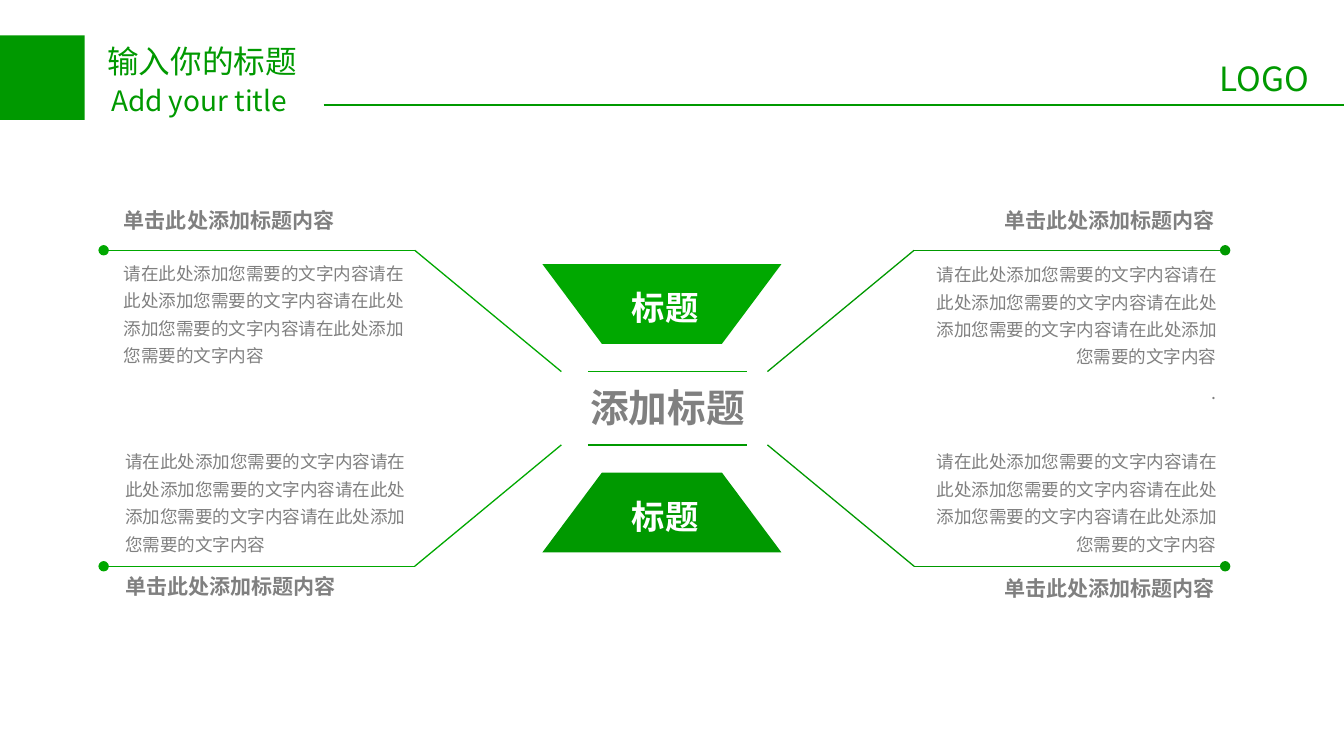
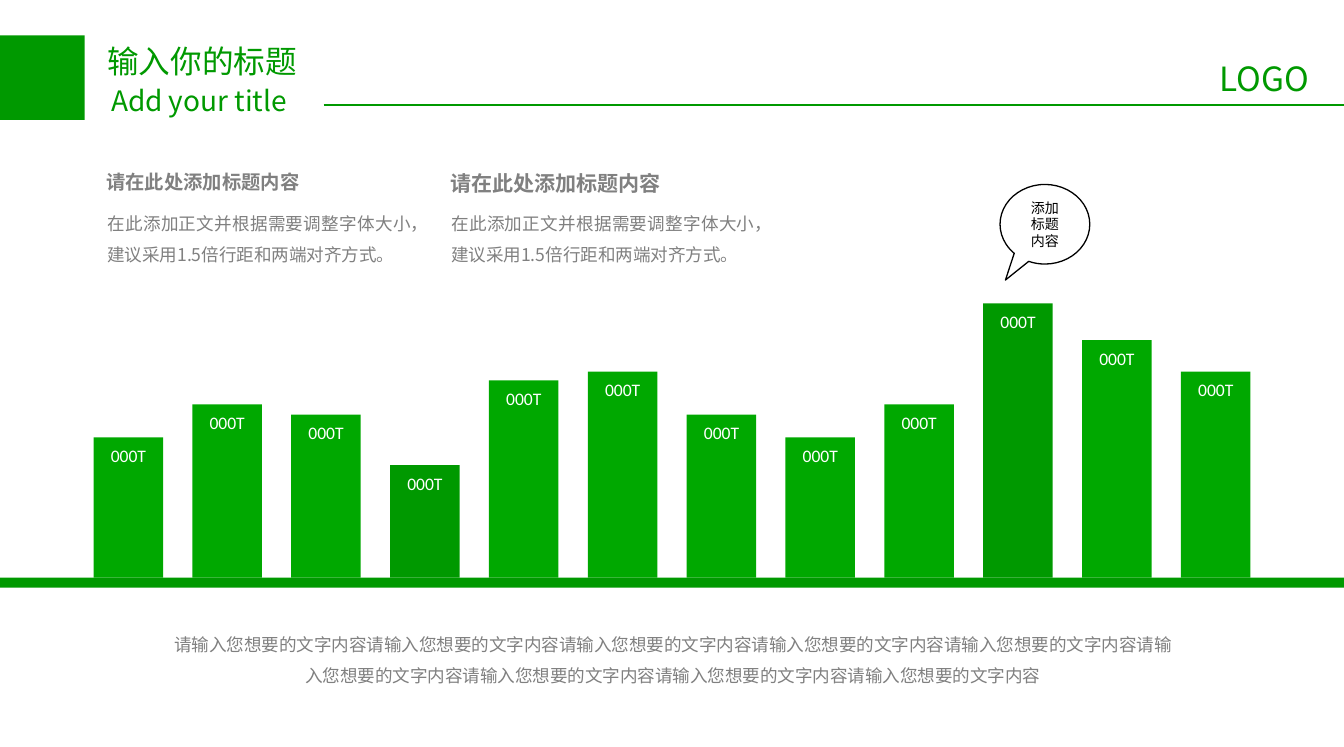
from dataclasses import dataclass

import lxml.etree
import pptx
import pptx.dml.color
import pptx.enum.shapes
import pptx.enum.text
import pptx.oxml.ns
import pptx.util

Inches = pptx.util.Inches
Align = pptx.enum.text.PP_ALIGN
Anchor = pptx.enum.text.MSO_ANCHOR
Shape = pptx.enum.shapes.MSO_SHAPE


@dataclass(frozen=True)
class Theme:
    dark_green: str = "009900"
    green: str = "00A800"
    grey: str = "808080"
    white: str = "FFFFFF"
    black: str = "000000"
    noto: str = "Noto Sans CJK SC"
    arial: str = "Arial"
    calibri: str = "Calibri"
    title: int = 18
    subtitle: int = 16
    label: int = 19
    center: int = 22
    heading: int = 12
    small_heading: int = 11
    body: int = 10
    callout: int = 8
    line: float = 0.75


THEME = Theme()
SLIDE_WIDTH, SLIDE_HEIGHT = 10.63, 5.91
DEFAULT_INSETS = (0.1, 0.05, 0.1, 0.05)
TEXT_INSETS = (0.08, 0.04, 0.08, 0.04)
FLUSH_INSETS = (0, 0.04, 0, 0.04)


def rgb(color):
    return pptx.dml.color.RGBColor.from_string(color)


def write_text(shape, *texts, size=THEME.body, font=THEME.arial, color=THEME.grey,
               bold=False, align=Align.LEFT, anchor=Anchor.TOP, insets=DEFAULT_INSETS,
               spacing=None, before=None, wrap=True):
    """Fill a shape with one paragraph per text."""
    frame = shape.text_frame
    frame.word_wrap = wrap
    frame.vertical_anchor = anchor
    (frame.margin_left, frame.margin_top,
     frame.margin_right, frame.margin_bottom) = map(Inches, insets)
    for index, text in enumerate(texts):
        paragraph = frame.add_paragraph() if index else frame.paragraphs[0]
        paragraph.alignment = align
        paragraph.line_spacing = spacing
        if before is not None:
            paragraph.space_before = pptx.util.Pt(before)
        run = paragraph.add_run()
        run.text = text
        run.font.size = pptx.util.Pt(size)
        run.font.bold = bold
        run.font.color.rgb = rgb(color)
        run.font.name = font
        # Chinese characters use the East Asian typeface
        east_asian = lxml.etree.SubElement(run.font._element, pptx.oxml.ns.qn("a:ea"))
        east_asian.set("typeface", THEME.noto)


def add_text(slide, box, *texts, **text_format):
    shape = slide.shapes.add_textbox(*map(Inches, box))
    write_text(shape, *texts, **text_format)


def paint(shape, fill, line=None):
    shape.shadow.inherit = False
    shape.fill.solid()
    shape.fill.fore_color.rgb = rgb(fill)
    if line:
        shape.line.color.rgb = rgb(line)
        shape.line.width = pptx.util.Pt(THEME.line)
    else:
        shape.line.fill.background()


def add_box(slide, box, fill, kind=Shape.RECTANGLE, line=None):
    shape = slide.shapes.add_shape(kind, *map(Inches, box))
    paint(shape, fill, line)
    return shape


def add_line(slide, start, end, color, dot=False):
    """Draw a straight line, with a dot at its start if wanted."""
    connector = slide.shapes.add_connector(
        pptx.enum.shapes.MSO_CONNECTOR.STRAIGHT, *map(Inches, (*start, *end)))
    connector.line.color.rgb = rgb(color)
    connector.line.width = pptx.util.Pt(THEME.line)
    properties = connector._element.spPr
    if dot:
        outline = properties.find(pptx.oxml.ns.qn("a:ln"))
        lxml.etree.SubElement(outline, pptx.oxml.ns.qn("a:headEnd")).set("type", "oval")
    lxml.etree.SubElement(properties, pptx.oxml.ns.qn("a:effectLst"))


def add_slide(presentation):
    """Add a blank slide with the shared title band."""
    slide = presentation.slides.add_slide(presentation.slide_layouts[6])
    style = {"font": THEME.noto, "color": THEME.dark_green}
    add_box(slide, (0, 0.28, 0.67, 0.67), THEME.dark_green)
    add_text(slide, (0.75, 0.28, 1.73, 0.4), "输入你的标题", size=THEME.title, **style)
    add_text(slide, (0.78, 0.61, 1.73, 0.37), "Add your title", size=THEME.subtitle, **style)
    add_line(slide, (2.56, 0.83), (SLIDE_WIDTH, 0.83), THEME.dark_green)
    add_text(slide, (9.55, 0.41, 0.96, 0.42), "LOGO", size=THEME.label, wrap=False, **style)
    return slide


def add_arm(slide, on_right, y, inner_y, color):
    """Draw a dotted rule that bends towards the center."""
    outer, bend, inner = (10.51 - x if on_right else x for x in (0.82, 3.28, 4.44))
    add_line(slide, (outer, y), (bend, y), color, dot=True)
    add_line(slide, (bend, y), (inner, inner_y), color)


def add_trapezoid(slide, wide_y, narrow_y, label_y, color):
    corners = [(4.29, wide_y), (4.76, narrow_y), (5.71, narrow_y), (6.18, wide_y)]
    points = [(Inches(x), Inches(y)) for x, y in corners]
    builder = slide.shapes.build_freeform(*points[0])
    builder.add_line_segments(points[1:], close=True)
    paint(builder.convert_to_shape(), color)
    add_text(slide, (4.9, label_y, 0.73, 0.42), "标题", size=THEME.label,
             color=THEME.white, bold=True, wrap=False)


def build_hub_slide(presentation):
    slide = add_slide(presentation)
    body = "请在此处添加您需要的文字内容" * 4

    # Four arms with heading and body: side, heading place, body place, font, extra
    arms = [
        (False, (0.9, 1.6), (0.9, 1.99), THEME.arial, ()),
        (False, (0.91, 4.5), (0.91, 3.48), THEME.noto, ()),
        (True, (6.88, 1.6), (7.32, 2), THEME.noto, (".",)),
        (True, (6.88, 4.51), (7.32, 3.48), THEME.arial, ()),
    ]
    for on_right, heading_at, body_at, font, extra in arms:
        on_top = heading_at[1] < body_at[1]
        add_arm(slide, on_right, 1.98 if on_top else 4.48, 2.94 if on_top else 3.52,
                THEME.dark_green if on_right else THEME.green)
        align = Align.RIGHT if on_right else Align.LEFT
        add_text(slide, (*heading_at, 2.81, 0.28), "单击此处添加标题内容",
                 size=THEME.heading, bold=True, align=align, insets=TEXT_INSETS)
        add_text(slide, (*body_at, 2.38, 1.23 if extra else 0.95), body, *extra, font=font,
                 align=align, insets=TEXT_INSETS, spacing=1.3, before=4.8)

    # Center title between two rules
    for y, color in ((2.94, THEME.green), (3.52, THEME.dark_green)):
        add_line(slide, (4.65, y), (5.91, y), color)
    add_text(slide, (4.59, 3, 1.38, 0.45), "添加标题", size=THEME.center, bold=True,
             align=Align.CENTER, insets=TEXT_INSETS, wrap=False)
    add_trapezoid(slide, 2.09, 2.72, 2.22, THEME.green)
    add_trapezoid(slide, 4.37, 3.74, 3.88, THEME.dark_green)


def build_bar_slide(presentation):
    slide = add_slide(presentation)

    # Evenly spaced bars standing on the ground band
    ground, first_left, last_left = 4.57, 0.74, 9.34
    tops = [3.46, 3.2, 3.28, 3.68, 3.01, 2.94, 3.28, 3.46, 3.2, 2.4, 2.69, 2.94]
    pitch = (last_left - first_left) / (len(tops) - 1)
    for index, top in enumerate(tops):
        color = THEME.dark_green if top in (min(tops), max(tops)) else THEME.green
        bar = add_box(slide, (first_left + index * pitch, top, 0.55, ground - top), color)
        write_text(bar, "000T", font=THEME.calibri, color=THEME.white,
                   align=Align.CENTER, insets=(0, 0.06, 0, 0.04))
    add_box(slide, (0, ground, SLIDE_WIDTH, 0.08), THEME.dark_green)
    add_text(slide, (1.32, 4.89, 8, 0.58), "请输入您想要的文字内容" * 9,
             align=Align.CENTER, insets=FLUSH_INSETS, spacing=1.5)

    # Two text columns
    columns = [(0.76, THEME.small_heading, THEME.noto), (3.48, THEME.heading, THEME.arial)]
    for left, size, font in columns:
        add_text(slide, (left, 1.31, 2.5, 0.28), "请在此处添加标题内容", size=size,
                 font=font, bold=True, insets=TEXT_INSETS)
        add_text(slide, (left + 0.09, 1.56, 2.4, 0.83),
                 "在此添加正文并根据需要调整字体大小，建议采用1.5倍行距和两端对齐方式。",
                 font=THEME.noto, align=Align.JUSTIFY, insets=FLUSH_INSETS, spacing=1.5)

    # Callout above the tallest bar
    callout = add_box(slide, (7.91, 1.46, 0.71, 0.63), THEME.white,
                      kind=Shape.OVAL_CALLOUT, line=THEME.black)
    callout.adjustments[0], callout.adjustments[1] = -0.44, 0.7
    write_text(callout, "添加标题内容", size=THEME.callout, color=THEME.black,
               align=Align.CENTER, anchor=Anchor.MIDDLE)


def main():
    presentation = pptx.Presentation()
    presentation.slide_width = Inches(SLIDE_WIDTH)
    presentation.slide_height = Inches(SLIDE_HEIGHT)
    build_hub_slide(presentation)
    build_bar_slide(presentation)
    presentation.save("out.pptx")


if __name__ == "__main__":
    main()
